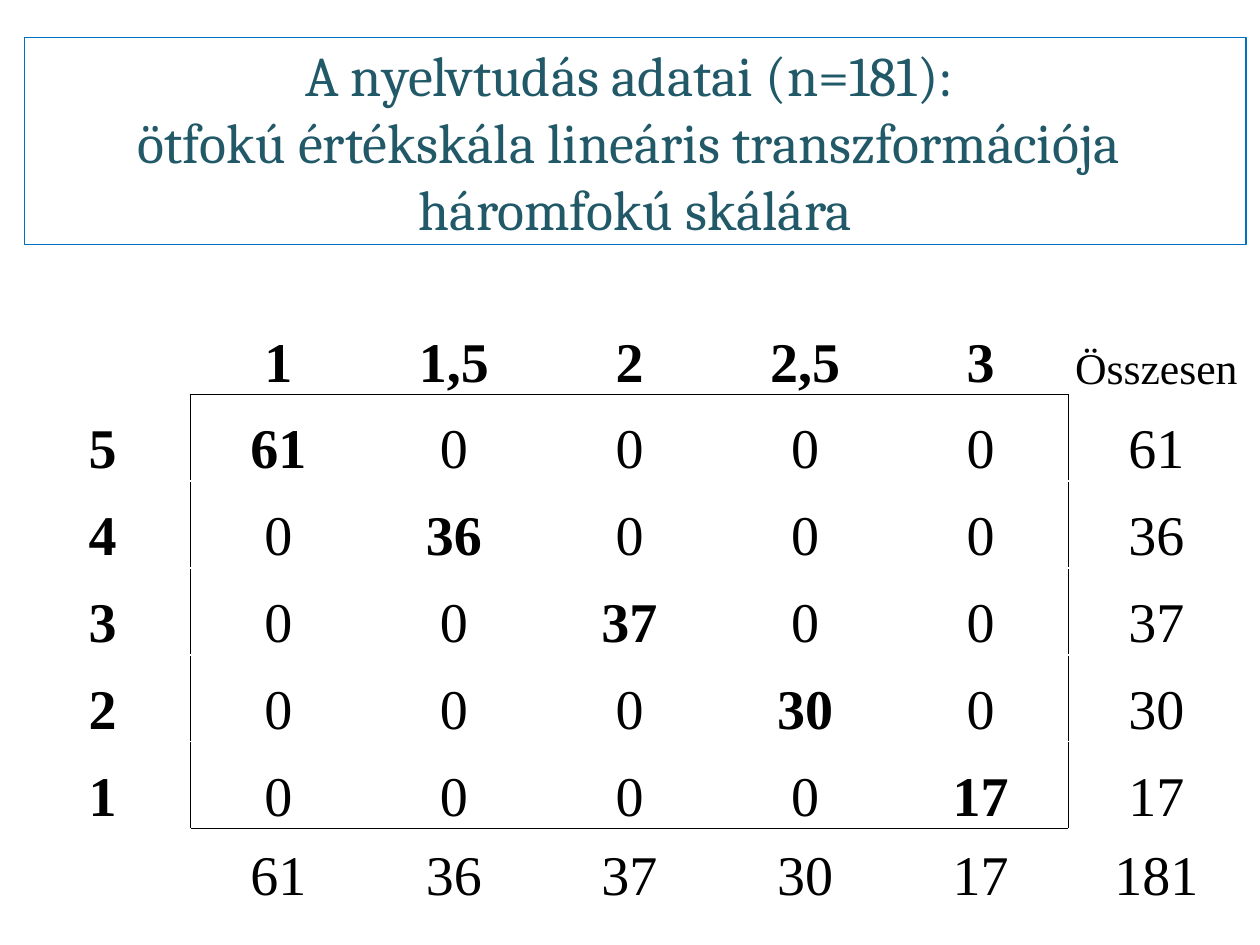
"""Build a slide showing the linear transformation of a five-point scale to three points."""
from lxml import etree
from pptx import Presentation
from pptx.dml.color import RGBColor
from pptx.enum.text import MSO_ANCHOR, PP_ALIGN
from pptx.util import Cm, Pt

CENTER = PP_ALIGN.CENTER
MIDDLE, BOTTOM = MSO_ANCHOR.MIDDLE, MSO_ANCHOR.BOTTOM
BLACK = RGBColor(0x00, 0x00, 0x00)
WHITE = RGBColor(0xFF, 0xFF, 0xFF)
BLUE = RGBColor(0x00, 0x70, 0xC0)
TEAL = RGBColor(0x21, 0x59, 0x68)
DRAWING = "http://schemas.openxmlformats.org/drawingml/2006/main"


def add_border(cell, side):
    line = etree.SubElement(cell._tc.get_or_add_tcPr(), f"{{{DRAWING}}}ln{side}", w=str(Pt(1)))
    fill = etree.SubElement(line, f"{{{DRAWING}}}solidFill")
    etree.SubElement(fill, f"{{{DRAWING}}}srgbClr", val=str(BLACK))


prs = Presentation()
prs.slide_width, prs.slide_height = Cm(25.4), Cm(19.05)
slide = prs.slides.add_slide(prs.slide_layouts[5])

title = slide.shapes.title
title.left, title.top, title.width, title.height = Cm(0.5), Cm(0.76), Cm(24.62), Cm(4.17)
title.line.color.rgb = BLUE
title.line.width = Pt(0.75)
title.text_frame.text = (
    "A nyelvtudás adatai (n=181): \vötfokú értékskála lineáris transzformációja \vháromfokú skálára"
)
title.text_frame.vertical_anchor = MIDDLE
heading = title.text_frame.paragraphs[0]
heading.alignment = CENTER
heading.font.name = "Cambria"
heading.font.size = Pt(32)
heading.font.color.rgb = TEAL

new_scale = ["1", "1,5", "2", "2,5", "3"]
old_scale = ["5", "4", "3", "2", "1"]
counts = [61, 36, 37, 30, 17]
size = len(counts)
rows = [["", *new_scale, "Összesen"]]
for i, (grade, count) in enumerate(zip(old_scale, counts)):
    rows.append([grade, *(count if i == j else 0 for j in range(size)), count])
rows.append(["", *counts, sum(counts)])

row_heights = [Cm(2.62)] + [Cm(1.75)] * size + [Cm(1.6)]
column_width = Cm(3.54)
crosstab = slide.shapes.add_table(
    len(rows), size + 2, Cm(0.3), Cm(5.33), column_width * (size + 2), sum(row_heights)
).table
crosstab.first_row = False
crosstab.horz_banding = False
for column in crosstab.columns:
    column.width = column_width
for row, height in zip(crosstab.rows, row_heights):
    row.height = height

for r, values in enumerate(rows):
    for c, value in enumerate(values):
        cell = crosstab.cell(r, c)
        in_row, in_column = 1 <= r <= size, 1 <= c <= size
        borders = {
            "L": in_row and c in (1, size + 1),
            "R": in_row and c in (0, size),
            "T": in_column and r in (1, size + 1),
            "B": in_column and r in (0, size),
        }
        for side, shown in borders.items():
            if shown:
                add_border(cell, side)
        if r == 0 and in_column:
            cell.fill.solid()
            cell.fill.fore_color.rgb = WHITE
        else:
            cell.fill.background()
        if value == "":
            continue
        cell.text = str(value)
        cell.vertical_anchor = BOTTOM
        cell.margin_left = cell.margin_right = Cm(0.13)
        cell.margin_top = cell.margin_bottom = 0
        entry = cell.text_frame.paragraphs[0]
        entry.alignment = CENTER
        entry.line_spacing = 1.15
        entry.font.name = "Times New Roman"
        entry.font.size = Pt(25 if value == "Összesen" else 32)
        entry.font.bold = (r == 0 and in_column) or (c == 0 and in_row) or (r == c and in_row)
        entry.font.color.rgb = BLACK

prs.save("out.pptx")
